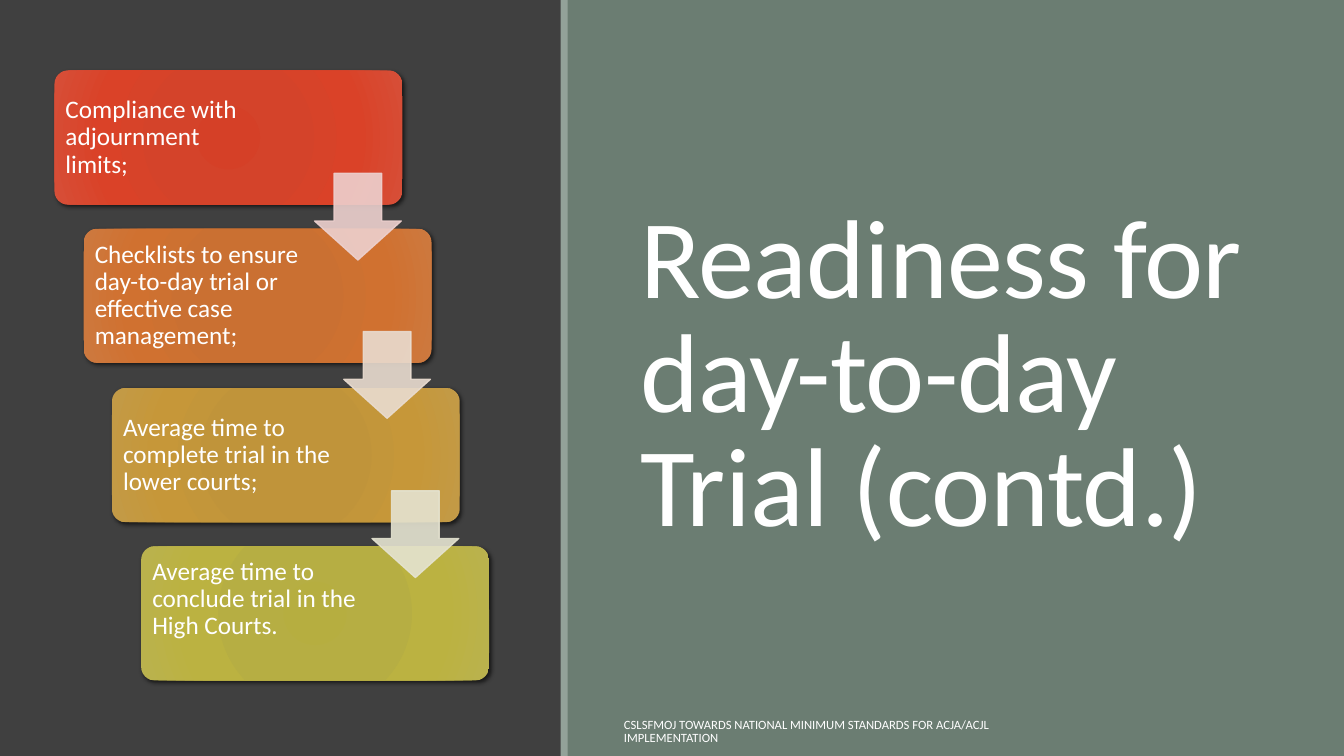
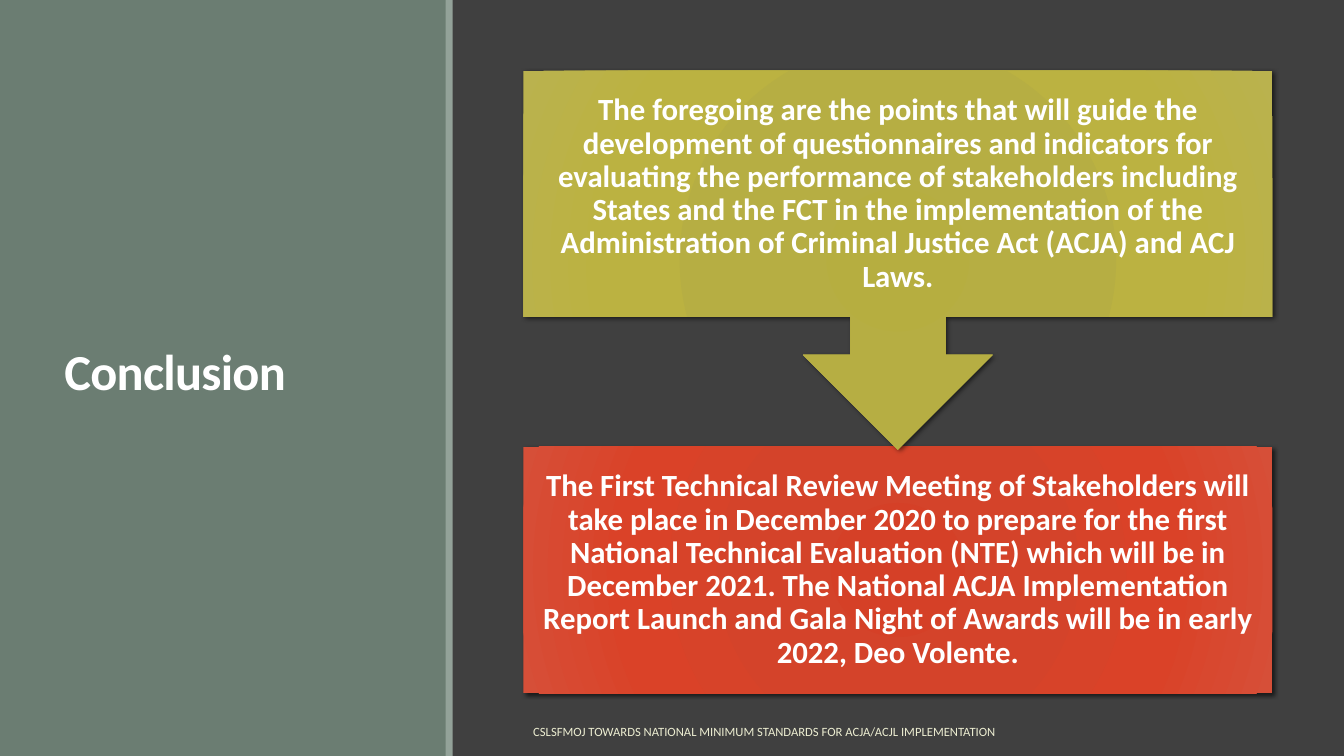
from typing import NamedTuple

from lxml import etree
from pptx import Presentation
from pptx.dml.color import RGBColor
from pptx.enum.shapes import MSO_SHAPE as SHAPE
from pptx.enum.text import MSO_ANCHOR as ANCHOR, PP_ALIGN as ALIGN
from pptx.oxml import parse_xml
from pptx.oxml.ns import nsdecls, qn
from pptx.util import Emu, Pt

PX = 9144  # EMU in one px, 100 px to the inch
WIDTH, HEIGHT = 1333, 750
FONT = "Calibri"
WHITE, CREAM = "FFFFFF", "ECEDD1"
DARK, SAGE, STRIPE = "404040", "6B7D72", "93A299"
FOOTER = "CSLSFMOJ TOWARDS NATIONAL MINIMUM STANDARDS FOR ACJA/ACJL IMPLEMENTATION"

STOPS = (0, 34, 70, 100)
RED = ("D54027", "D4432A", "DA4228", "D64F38")
ORANGE = ("CB6E2F", "CA7032", "D07130", "CD793F")
GOLD = ("C19337", "C0943A", "C69739", "C39A47")
OLIVE = ("B6AE40", "B6AE43", "BBB241", "BAB24E")


class Box(NamedTuple):
    left: int
    top: int
    width: int
    height: int

    def emu(self) -> list[Emu]:
        return [Emu(v * PX) for v in self]


class Style(NamedTuple):
    size: int
    color: str = WHITE
    bold: bool = False
    spacing: float = 0.9
    align: ALIGN = ALIGN.LEFT
    inset: tuple[int, int] = (10, 5)
    tracking: int = 0


class Frame(NamedTuple):
    panel: Box
    stripe_left: int
    title: str
    title_box: Box
    title_style: Style
    footer_box: Box
    footer_style: Style


class Step(NamedTuple):
    text: str
    colors: tuple[str, ...]
    text_width: int = 222
    text_height: int = 125
    arrow: str = ""


STEP_STYLE = Style(18, inset=(7, 7))
CALLOUT_STYLE = Style(22, bold=True, align=ALIGN.CENTER, inset=(17, 17))

READINESS = Frame(
    Box(562, 0, 771, HEIGHT), 556,
    "Readiness for day-to-day Trial (contd.)", Box(625, 70, 637, 611),
    Style(80, spacing=0.85, tracking=-50),
    Box(609, 706, 468, 40), Style(9),
)
CONCLUSION = Frame(
    Box(0, 0, 443, HEIGHT), 442,
    "Conclusion", Box(54, 57, 337, 631),
    Style(36, bold=True, spacing=0.85, tracking=-50),
    Box(519, 706, 558, 40), Style(9, CREAM, spacing=1.0),
)

STEPS = (
    Step("Compliance with adjournment limits;", RED, text_width=190, arrow="EDD1CF"),
    Step("Checklists to ensure day-to-day trial or effective case management;",
         ORANGE, arrow="E9DCD0"),
    Step("Average time to complete trial in the lower courts;", GOLD, arrow="E5E3D1"),
    Step("Average time to conclude trial in the High Courts.", OLIVE, text_height=97),
)
GUIDE = ("The foregoing are the points that will guide the development of "
         "questionnaires and indicators for evaluating the performance of "
         "stakeholders including States and the FCT in the implementation of the "
         "Administration of Criminal Justice Act (ACJA) and ACJ Laws.")
MEETING = ("The First Technical Review Meeting of Stakeholders will take place in "
           "December 2020 to prepare for the first National Technical Evaluation "
           "(NTE) which will be in December 2021. The National ACJA Implementation "
           "Report Launch and Gala Night of Awards will be in early 2022, Deo Volente.")


def rgb(color: str) -> RGBColor:
    return RGBColor.from_string(color)


def add_shape(slide, kind: SHAPE, box: Box, color: str):
    sp = slide.shapes.add_shape(kind, *box.emu())
    sp.shadow.inherit = False
    sp.fill.solid()
    sp.fill.fore_color.rgb = rgb(color)
    sp.line.fill.background()
    return sp


def add_glow_shape(slide, kind: SHAPE, box: Box, colors: tuple[str, ...]):
    """Add a shape with a circular gradient and a soft shadow."""
    sp = add_shape(slide, kind, box, colors[0])
    stops = "".join(
        f'<a:gs pos="{pos * 1000}"><a:srgbClr val="{color}"/></a:gs>'
        for pos, color in zip(STOPS, colors)
    )
    props = sp.fill._xPr
    props.replace(props.find(qn("a:solidFill")), parse_xml(
        f'<a:gradFill {nsdecls("a")} rotWithShape="1"><a:gsLst>{stops}</a:gsLst>'
        '<a:path path="circle"><a:fillToRect l="100000" t="100000" r="100000" '
        'b="100000"/></a:path></a:gradFill>'))
    props.find(qn("a:effectLst")).append(parse_xml(
        f'<a:outerShdw {nsdecls("a")} blurRad="{Pt(3)}" dist="{Pt(2)}" '
        f'dir="{45 * 60000}" rotWithShape="0"><a:srgbClr val="000000">'
        '<a:alpha val="60000"/></a:srgbClr></a:outerShdw>'))
    return sp


def add_text(slide, box: Box, text: str, style: Style) -> None:
    tf = slide.shapes.add_textbox(*box.emu()).text_frame
    tf.word_wrap = True
    tf.vertical_anchor = ANCHOR.MIDDLE
    side, end = (Emu(v * PX) for v in style.inset)
    tf.margin_left = tf.margin_right = side
    tf.margin_top = tf.margin_bottom = end
    p = tf.paragraphs[0]
    p.alignment = style.align
    p.line_spacing = style.spacing
    r = p.add_run()
    r.text = text
    r.font.name = FONT
    r.font.size = Pt(style.size)
    r.font.bold = style.bold
    r.font.color.rgb = rgb(style.color)
    if style.tracking:
        r.font._element.set("spc", str(style.tracking))


def add_framed_slide(prs, frame: Frame):
    """Add a slide with its side panel, stripe, title and footer."""
    slide = prs.slides.add_slide(prs.slide_layouts[6])
    bg = slide.background.fill
    bg.solid()
    bg.fore_color.rgb = rgb(DARK)
    add_shape(slide, SHAPE.RECTANGLE, frame.panel, SAGE)
    add_text(slide, frame.title_box, frame.title, frame.title_style)
    add_shape(slide, SHAPE.RECTANGLE, Box(frame.stripe_left, 0, 7, HEIGHT), STRIPE)
    add_text(slide, frame.footer_box, FOOTER, frame.footer_style)
    return slide


def add_step_arrow(slide, box: Box, color: str) -> None:
    sp = add_shape(slide, SHAPE.DOWN_ARROW, box, color)
    sp.adjustments[0], sp.adjustments[1] = 0.55, 0.45
    sp.line.color.rgb = rgb(color)
    sp.line.width = Pt(1)
    for clr in sp.fill._xPr.iter(qn("a:srgbClr")):
        etree.SubElement(clr, qn("a:alpha")).set("val", "90000")


def build_readiness(prs) -> None:
    slide = add_framed_slide(prs, READINESS)
    boxes = [Box(54 + round(28.7 * i), 70 + round(157.3 * i), 345, 133)
             for i in range(len(STEPS))]
    for step, box in zip(STEPS, boxes):
        sp = add_glow_shape(slide, SHAPE.ROUNDED_RECTANGLE, box, step.colors)
        sp.adjustments[0] = 0.1
        text_box = Box(box.left + 4, box.top + 4, step.text_width, step.text_height)
        add_text(slide, text_box, step.text, STEP_STYLE)
    for step, box in zip(STEPS, boxes):
        if step.arrow:
            add_step_arrow(slide, Box(box.left + 258, box.top + 102, 86, 86), step.arrow)


def build_conclusion(prs) -> None:
    slide = add_framed_slide(prs, CONCLUSION)
    upper, lower = (Box(519, top, 743, 245) for top in (70, 443))
    add_glow_shape(slide, SHAPE.RECTANGLE, lower, RED)
    add_text(slide, lower, MEETING, CALLOUT_STYLE)
    callout = add_glow_shape(slide, SHAPE.UP_ARROW_CALLOUT,
                             upper._replace(height=376), OLIVE)
    callout.rotation = 180
    add_text(slide, upper, GUIDE, CALLOUT_STYLE)


def main() -> None:
    prs = Presentation()
    prs.slide_width, prs.slide_height = Emu(WIDTH * PX), Emu(HEIGHT * PX)
    build_readiness(prs)
    build_conclusion(prs)
    prs.save("out.pptx")


if __name__ == "__main__":
    main()
